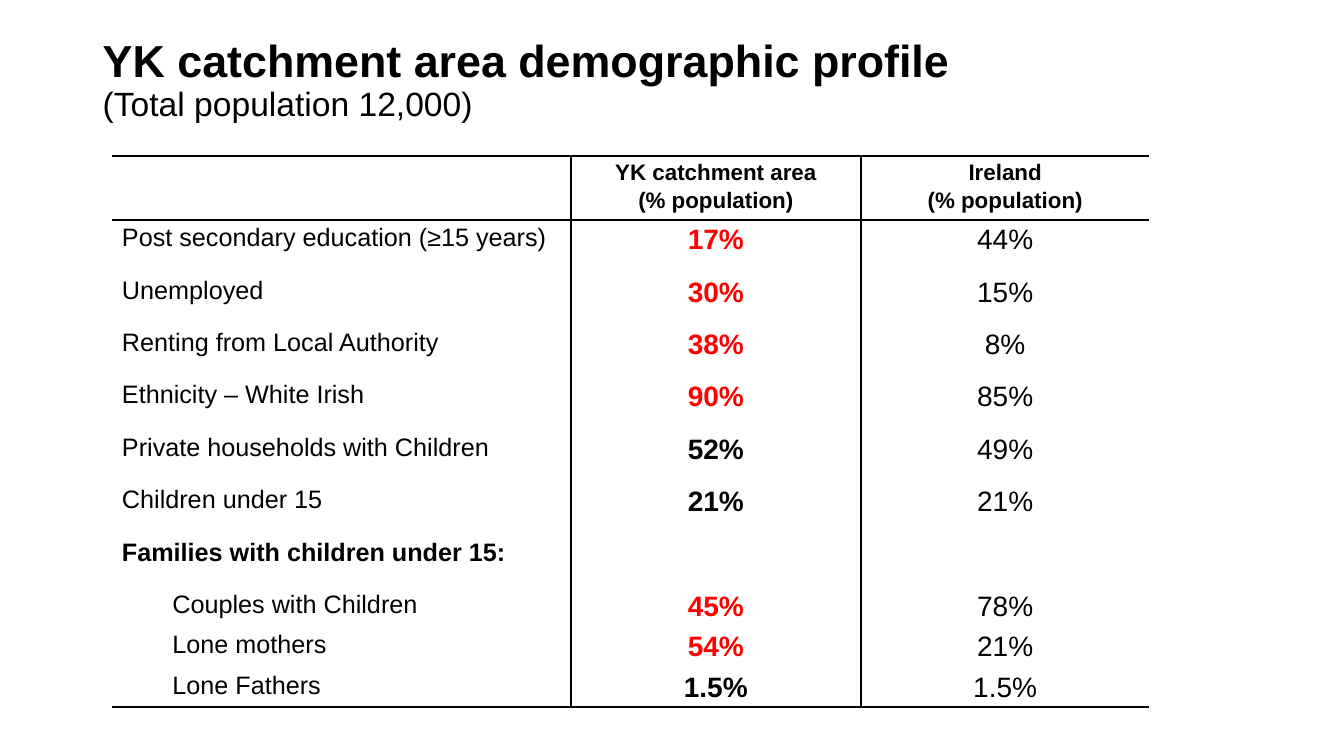
from lxml.etree import SubElement
from pptx import Presentation
from pptx.dml.color import RGBColor
from pptx.enum.text import MSO_ANCHOR, PP_ALIGN
from pptx.oxml.ns import qn
from pptx.util import Inches, Pt

BLACK = RGBColor(0x00, 0x00, 0x00)
RED = RGBColor(0xFF, 0x00, 0x00)
RULE_WIDTH = Pt(1.5)

COLUMN_WIDTHS = [4.55, 2.88, 2.86]
HEADINGS = ["", "YK catchment area", "Ireland"]
# label, catchment area, Ireland, catchment value stands out
PROFILE = [
    ("Post secondary education (≥15 years)", "17%", "44%", True),
    ("Unemployed", "30%", "15%", True),
    ("Renting from Local Authority", "38%", "8%", True),
    ("Ethnicity – White Irish", "90%", "85%", True),
    ("Private households with Children", "52%", "49%", False),
    ("Children under 15", "21%", "21%", False),
    ("Families with children under 15:", "", "", False),
    ("Couples with Children", "45%", "78%", True),
    ("Lone mothers", "54%", "21%", True),
    ("Lone Fathers", "1.5%", "1.5%", False),
]
FAMILIES_ROW = 7
LAST_ROW = len(PROFILE)
LAST_COLUMN = len(HEADINGS) - 1
ROW_HEIGHTS = [0.63] + [0.52] * FAMILIES_ROW + [0.4] * (LAST_ROW - FAMILIES_ROW)


def add_text(paragraph, text, size, bold=False, color=BLACK):
    run = paragraph.add_run()
    run.text = text
    run.font.color.rgb = color
    for name, value in {"name": "Arial", "size": Pt(size), "bold": bold}.items():
        setattr(run.font, name, value)


def rule_cell(cell, ruled_sides):
    """Draw black rules on the given sides (of L, R, T, B) and clear the rest."""
    properties = cell._tc.get_or_add_tcPr()
    for side in "LRTB":
        rule = SubElement(properties, qn(f"a:ln{side}"), w=str(RULE_WIDTH))
        if side in ruled_sides:
            fill = SubElement(rule, qn("a:solidFill"))
            SubElement(fill, qn("a:srgbClr"), val=str(BLACK))
        else:
            SubElement(rule, qn("a:noFill"))
    cell.fill.background()


presentation = Presentation()
presentation.slide_width = Inches(13.33)
presentation.slide_height = Inches(7.5)
slide = presentation.slides.add_slide(presentation.slide_layouts[6])

title = slide.shapes.add_textbox(
    Inches(0.92), Inches(0.23), Inches(10.48), Inches(1.16)).text_frame
title.word_wrap = True
title.vertical_anchor = MSO_ANCHOR.MIDDLE
title_line = title.paragraphs[0]
title_line.line_spacing = 0.9
add_text(title_line, "YK catchment area demographic profile", 32, bold=True)
title_line.add_line_break()
add_text(title_line, "(Total population 12,000)", 24)

demographics = slide.shapes.add_table(
    len(ROW_HEIGHTS), len(COLUMN_WIDTHS), Inches(1.11), Inches(1.55),
    Inches(sum(COLUMN_WIDTHS)), Inches(sum(ROW_HEIGHTS))).table
demographics.first_row = False
demographics.horz_banding = False
for column, width in zip(demographics.columns, COLUMN_WIDTHS):
    column.width = Inches(width)
for row, height in zip(demographics.rows, ROW_HEIGHTS):
    row.height = Inches(height)

for row_index in range(LAST_ROW + 1):
    for column_index in range(LAST_COLUMN + 1):
        cell = demographics.cell(row_index, column_index)
        sides = "L" if column_index > 0 else ""
        sides += "R" if column_index < LAST_COLUMN else ""
        sides += "T" if row_index in (0, 1) else ""
        sides += "B" if row_index in (0, LAST_ROW) else ""
        rule_cell(cell, sides)

        if row_index == 0:
            heading = HEADINGS[column_index]
            lines = [heading, "(% population)"] if heading else []
            text_format = {"size": 16, "bold": True}
        else:
            *values, stands_out = PROFILE[row_index - 1]
            lines = [values[column_index]] if values[column_index] else []
            text_format = [
                {"size": 18, "bold": row_index == FAMILIES_ROW},
                {"size": 20, "bold": True, "color": RED if stands_out else BLACK},
                {"size": 20},
            ][column_index]
        if not lines:
            continue

        cell.margin_top = cell.margin_bottom = 0
        for line_index, line in enumerate(lines):
            frame = cell.text_frame
            paragraph = frame.add_paragraph() if line_index else frame.paragraphs[0]
            paragraph.line_spacing = 1.15
            if column_index > 0:
                paragraph.alignment = PP_ALIGN.CENTER
            elif row_index > FAMILIES_ROW:
                paragraph_properties = paragraph._p.get_or_add_pPr()
                paragraph_properties.set("marL", str(Inches(0.5)))
                paragraph_properties.set("indent", "0")
            add_text(paragraph, line, **text_format)

presentation.save("out.pptx")
